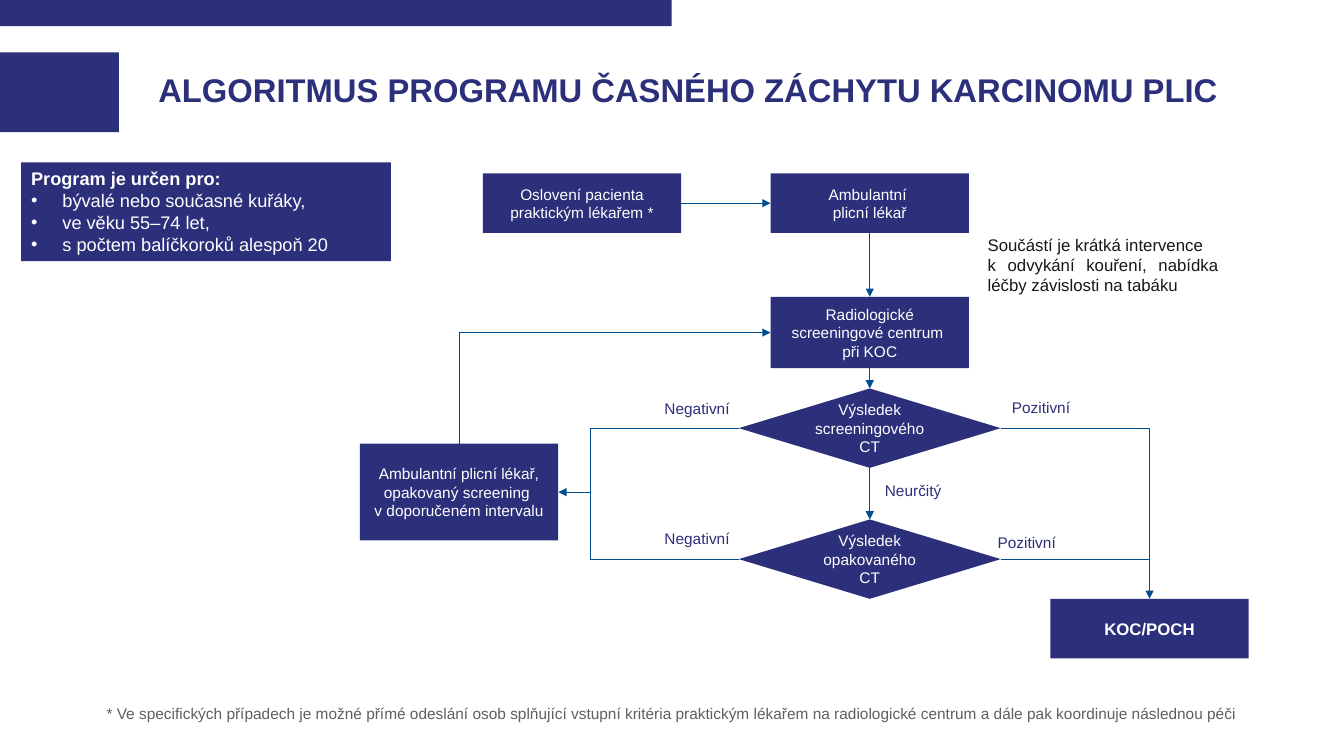
from lxml import etree
from pptx import Presentation
from pptx.dml.color import RGBColor
from pptx.enum.shapes import MSO_CONNECTOR, MSO_SHAPE
from pptx.enum.text import MSO_ANCHOR, MSO_AUTO_SIZE, PP_ALIGN
from pptx.oxml.ns import qn
from pptx.util import Cm, Pt

RECTANGLE, DIAMOND = MSO_SHAPE.RECTANGLE, MSO_SHAPE.DIAMOND
STRAIGHT = MSO_CONNECTOR.STRAIGHT
LEFT, CENTER, RIGHT, JUSTIFY = PP_ALIGN.LEFT, PP_ALIGN.CENTER, PP_ALIGN.RIGHT, PP_ALIGN.JUSTIFY
TOP, MIDDLE = MSO_ANCHOR.TOP, MSO_ANCHOR.MIDDLE
NO_AUTOFIT = MSO_AUTO_SIZE.NONE

NAVY, NAVY_TEXT, LINE_BLUE = "2C2F79", "2C2F7A", "004E8F"
WHITE, BLACK, GREY = "FFFFFF", "181717", "5F5F5F"

TITLE = "ALGORITMUS PROGRAMU ČASNÉHO ZÁCHYTU KARCINOMU PLIC"
CRITERIA = [
    "Program je určen pro:",
    "bývalé nebo současné kuřáky,",
    "ve věku 55–74 let,",
    "s počtem balíčkoroků alespoň 20",
]
FOOTNOTE = ("* Ve specifických případech je možné přímé odeslání osob splňující vstupní kritéria "
            "praktickým lékařem na radiologické centrum a dále pak koordinuje následnou péči")
INTERVENTION = ["Součástí je krátká intervence",
                "k odvykání kouření, nabídka léčby závislosti na tabáku"]

BARS = [(0, 0, 16.93, 0.66), (0, 1.32, 3, 2.01)]
BOX_WIDTH, BOX_HEIGHT = 5, 1.5
DIAMOND_WIDTH, DIAMOND_HEIGHT = 6.6, 2
MAIN_X, REPEAT_X, KOC_X = 21.92, 11.57, 28.97
BRANCH_X = 14.88

NODES = {
    "gp": ("Oslovení pacienta praktickým lékařem *", RECTANGLE, 14.67, 5.12, BOX_HEIGHT),
    "lung": ("Ambulantní \nplicní lékař", RECTANGLE, MAIN_X, 5.12, BOX_HEIGHT),
    "center": ("Radiologické screeningové centrum \npři KOC", RECTANGLE, MAIN_X, 8.38, 1.8),
    "first_ct": ("Výsledek screeningového CT", DIAMOND, MAIN_X, 10.79, DIAMOND_HEIGHT),
    "second_ct": ("Výsledek opakovaného CT", DIAMOND, MAIN_X, 14.09, DIAMOND_HEIGHT),
    "repeat": ("Ambulantní plicní lékař, opakovaný screening \nv doporučeném intervalu",
               RECTANGLE, REPEAT_X, 12.4, 2.44),
    "koc": ("KOC/POCH", RECTANGLE, KOC_X, 15.84, BOX_HEIGHT),
}
LABELS = [
    ("Pozitivní", 25.25, 9.91, LEFT),
    ("Neurčitý", 22.05, 12.01, LEFT),
    ("Pozitivní", 24.89, 13.31, LEFT),
    ("Negativní", 15.8, 9.93, RIGHT),
    ("Negativní", 15.8, 13.21, RIGHT),
]


def color(value):
    return RGBColor.from_string(value)


def format_paragraph(paragraph, size, text_color, align=LEFT, bold=False):
    paragraph.alignment = align
    font = paragraph.font
    font.name, font.size, font.bold = "Arial", Pt(size), bold
    font.color.rgb = color(text_color)


def place(shape, left, top, width, height):
    shape.left, shape.top, shape.width, shape.height = map(Cm, (left, top, width, height))


def fill_text(shape, lines, size, text_color, align=LEFT, bold=False, anchor=TOP):
    frame = shape.text_frame
    frame.word_wrap = True
    frame.vertical_anchor = anchor
    for index, line in enumerate(lines):
        paragraph = frame.add_paragraph() if index else frame.paragraphs[0]
        paragraph.text = line
        format_paragraph(paragraph, size, text_color, align, bold)


def add_block(slide, kind, left, top, width, height):
    shape = slide.shapes.add_shape(kind, Cm(left), Cm(top), Cm(width), Cm(height))
    shape.shadow.inherit = False
    shape.fill.solid()
    shape.fill.fore_color.rgb = color(NAVY)
    shape.line.fill.background()
    return shape


def add_text(slide, lines, bounds, size, text_color, align=LEFT):
    box = slide.shapes.add_textbox(*map(Cm, bounds))
    fill_text(box, lines, size, text_color, align)


def add_route(slide, points, arrow=True):
    for index, (start, end) in enumerate(zip(points, points[1:]), 2):
        connector = slide.shapes.add_connector(STRAIGHT, *map(Cm, start + end))
        connector.line.color.rgb = color(LINE_BLUE)
        connector.line.width = Pt(0.5)
        if arrow and index == len(points):
            tail = etree.SubElement(connector.line._get_or_add_ln(), qn("a:tailEnd"))
            tail.set("type", "triangle")
        etree.SubElement(connector._element.spPr, qn("a:effectLst"))


def side(name, horizontal, vertical):
    _, kind, x, y, height = NODES[name]
    width = DIAMOND_WIDTH if kind == DIAMOND else BOX_WIDTH
    return x + horizontal * width / 2, y + vertical * height / 2


def add_title(slide):
    title = slide.shapes.title
    place(title, 3.99, 1.32, 27.23, 2.01)
    fill_text(title, [TITLE], 23.4, NAVY_TEXT, bold=True, anchor=MIDDLE)
    title.text_frame.auto_size = NO_AUTOFIT
    title.text_frame.margin_left = 0
    title.text_frame.paragraphs[0].line_spacing = 0.9


def add_criteria(slide):
    body = slide.placeholders[1]
    place(body, 0.53, 4.09, 9.32, 2.49)
    body.fill.solid()
    body.fill.fore_color.rgb = color(NAVY_TEXT)
    fill_text(body, CRITERIA, 13, WHITE)
    body.text_frame.auto_size = NO_AUTOFIT
    for index, paragraph in enumerate(body.text_frame.paragraphs):
        indent = Cm(0.79) if index else 0
        paragraph.space_before = Pt(0)
        paragraph.font.bold = index == 0
        properties = paragraph._p.get_or_add_pPr()
        properties.set("marL", str(indent))
        properties.set("indent", str(-indent))
        bullet = etree.Element(qn("a:buChar" if index else "a:buNone"))
        if index:
            bullet.set("char", "•")
        properties.find(qn("a:defRPr")).addprevious(bullet)


def add_flowchart(slide):
    for name, (text, kind, x, y, height) in NODES.items():
        left, top = side(name, -1, -1)
        shape = add_block(slide, kind, left, top, 2 * (x - left), height)
        final = name == "koc"
        fill_text(shape, [text], 12 if final else 11, WHITE, CENTER, final, MIDDLE)

    add_route(slide, [side("gp", 1, 0), side("lung", -1, 0)])
    for upper, lower in [("lung", "center"), ("center", "first_ct"), ("first_ct", "second_ct")]:
        add_route(slide, [side(upper, 0, 1), side(lower, 0, -1)])

    first_left, second_left = side("first_ct", -1, 0), side("second_ct", -1, 0)
    first_right, second_right = side("first_ct", 1, 0), side("second_ct", 1, 0)
    repeat_right, repeat_top = side("repeat", 1, 0), side("repeat", 0, -1)
    center_left = side("center", -1, 0)
    add_route(slide, [first_left, (BRANCH_X, first_left[1]),
                      (BRANCH_X, second_left[1]), second_left], arrow=False)
    add_route(slide, [(BRANCH_X, repeat_right[1]), repeat_right])
    add_route(slide, [repeat_top, (REPEAT_X, center_left[1]), center_left])
    add_route(slide, [first_right, (KOC_X, first_right[1]), side("koc", 0, -1)])
    add_route(slide, [second_right, (KOC_X, second_right[1])], arrow=False)

    for text, left, top, align in LABELS:
        add_text(slide, [text], (left, top, 2.84, 0.73), 11, NAVY_TEXT, align)


def main():
    presentation = Presentation()
    presentation.slide_width, presentation.slide_height = Cm(33.87), Cm(19.05)
    slide = presentation.slides.add_slide(presentation.slide_layouts[1])
    for bar in BARS:
        add_block(slide, RECTANGLE, *bar)
    add_title(slide)
    add_criteria(slide)
    add_flowchart(slide)
    add_text(slide, INTERVENTION, (24.64, 5.79, 6.32, 1.8), 12, BLACK, JUSTIFY)
    add_text(slide, [FOOTNOTE], (1.19, 17.63, 31.5, 0.73), 11, GREY, CENTER)
    presentation.save("out.pptx")


if __name__ == "__main__":
    main()
